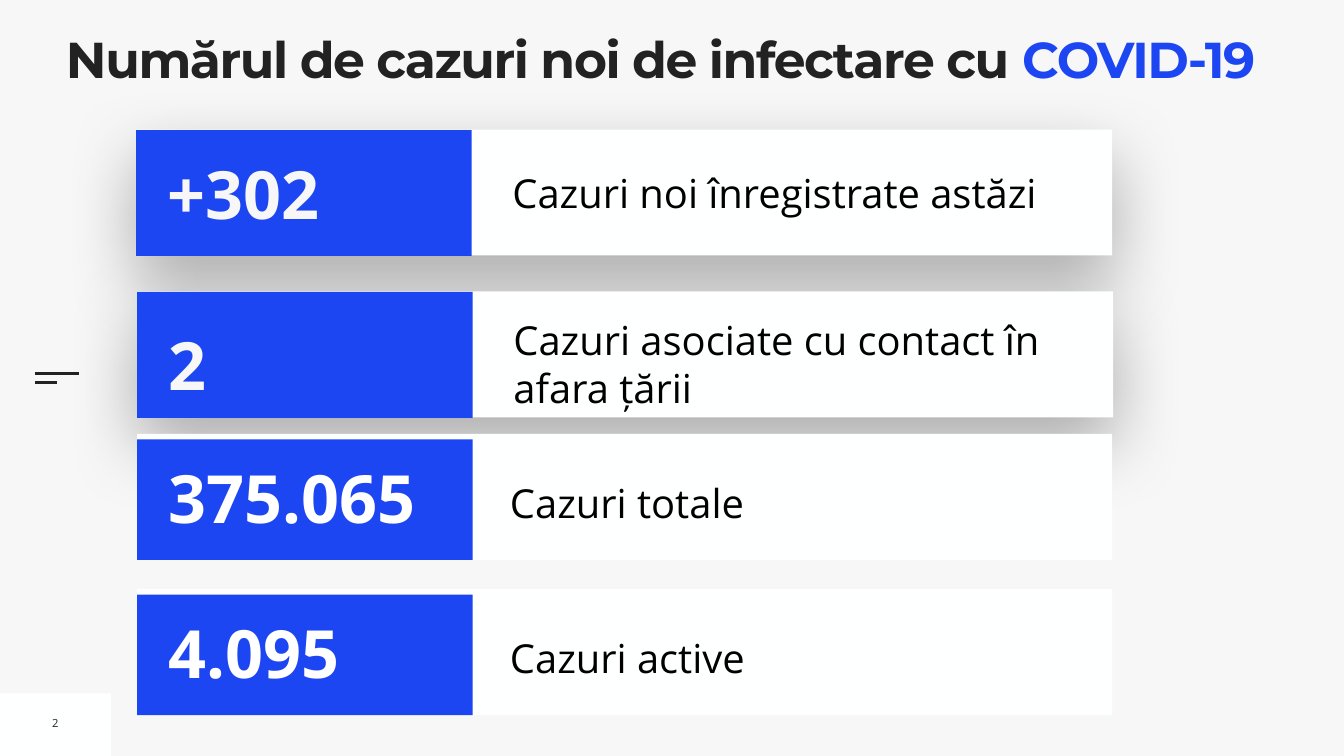
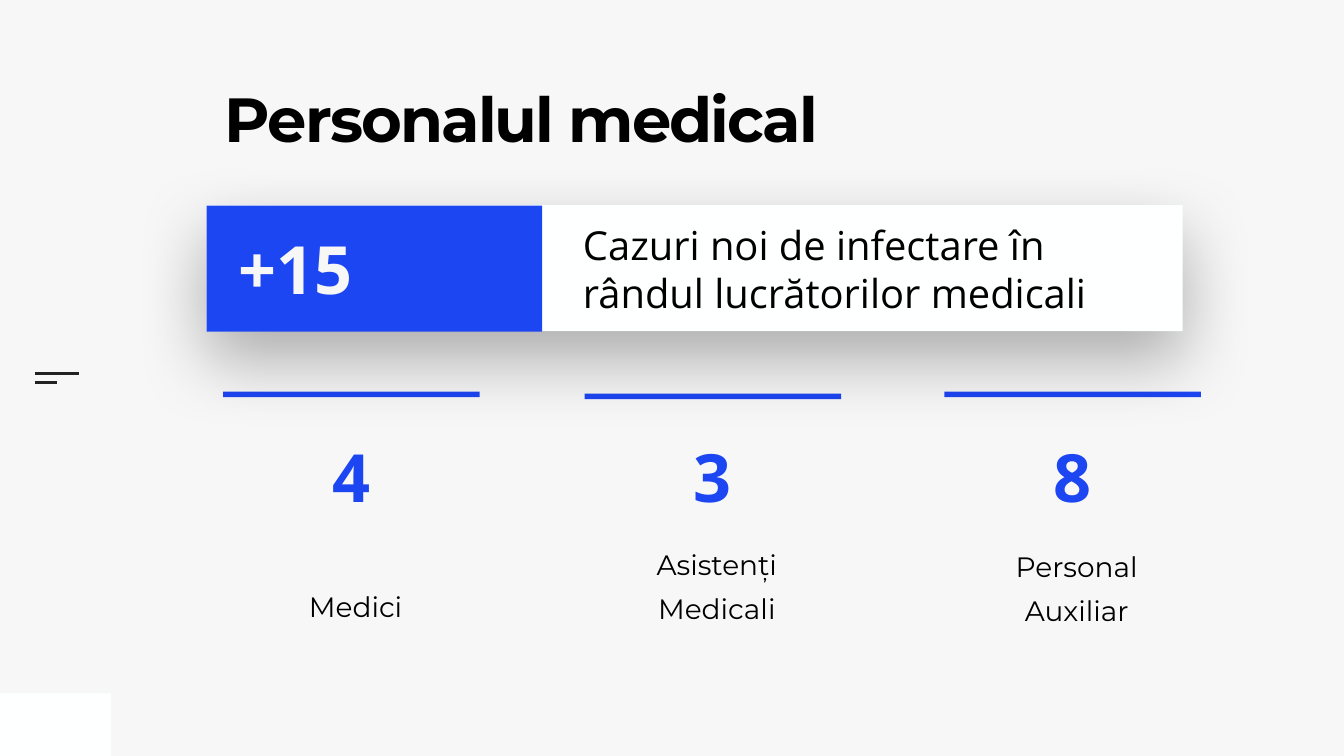
from lxml.etree import SubElement
from pptx import Presentation
from pptx.dml.color import RGBColor
from pptx.enum.shapes import MSO_CONNECTOR, MSO_SHAPE
from pptx.enum.text import MSO_ANCHOR, MSO_AUTO_SIZE, PP_ALIGN
from pptx.oxml.ns import qn
from pptx.util import Inches, Pt

COLORS = {
    "background": "F7F7F7",
    "panel": "FEFFFF",
    "accent": "1D46F3",
    "dark": "222222",
    "black": "000000",
    "white": "FFFFFF",
}
HEADING_FONT, BODY_FONT = "Montserrat", "Open Sans"

CASES_TITLE = [("Numărul de cazuri noi de infectare cu ", "dark"), ("COVID-19", "accent")]
# value, label, left, top, how far the text sits below the middle
NEW_CASES = [
    ("+302", "Cazuri noi înregistrate astăzi", 2.7, 2.57, 0),
    ("2", "Cazuri asociate cu contact în afara țării", 2.72, 5.78, 0.19),
]
# value, label, left, top
TOTAL_CASES = [
    ("375.065", "Cazuri totale", 2.72, 8.61),
    ("4.095", "Cazuri active", 2.72, 11.69),
]

STAFF_TITLE = [("Personalul medical", "black")]
STAFF_CASES = ("+15", "Cazuri noi de infectare în rândul lucrătorilor medicali", 4.1, 4.07, 0)
# value, label, left, top of panel, top of bar
STAFF_GROUPS = [
    ("4", "Medici", 4.43, 7.77, 7.77),
    ("3", "Asistenți Medicali", 11.6, 7.81, 7.81),
    ("8", "Personal Auxiliar", 18.74, 7.85, 7.77),
]
STAFF_WIDTH = 5.09

CARD_HEIGHT, VALUE_WIDTH = 2.5, 6.66
VALUE_INDENT = 0.53


def rgb(name):
    return RGBColor.from_string(COLORS[name])


def add_rectangle(shapes, left, top, width, height, color):
    box = shapes.add_shape(MSO_SHAPE.RECTANGLE, Inches(left), Inches(top),
                           Inches(width), Inches(height))
    box.shadow.inherit = False
    box.fill.solid()
    box.fill.fore_color.rgb = rgb(color)
    box.line.fill.background()
    return box


def add_soft_shadow(box):
    effects = box._element.spPr.find(qn("a:effectLst"))
    shadow = SubElement(effects, qn("a:outerShdw"), blurRad=str(Pt(100)), dist=str(Pt(40)),
                        dir="5400000", rotWithShape="0")
    color = SubElement(shadow, qn("a:srgbClr"), val=COLORS["black"])
    SubElement(color, qn("a:alpha"), val="30000")


def write(box, parts, size, font=BODY_FONT, bold=False, align=PP_ALIGN.LEFT,
          anchor=MSO_ANCHOR.MIDDLE, insets=(0.1, 0.1, 0.1, 0.1), line_spacing=None,
          space_before=0, tracking=None):
    """Fill a box with one paragraph made of (text, colour) parts."""
    frame = box.text_frame
    frame.word_wrap = True
    frame.vertical_anchor = anchor
    frame.margin_left, frame.margin_top, frame.margin_right, frame.margin_bottom = map(
        Inches, insets)
    para = frame.paragraphs[0]
    para.alignment = align
    para.space_before = Pt(space_before)
    if line_spacing:
        para.line_spacing = line_spacing
    for text, color in parts:
        span = para.add_run()
        span.text = text
        span.font.size = Pt(size)
        span.font.name = font
        span.font.bold = bold
        span.font.color.rgb = rgb(color)
        if tracking:
            span.font._element.set("spc", str(round(tracking * 100)))


def add_text(shapes, left, top, width, height, parts, size, grow=True, **style):
    box = shapes.add_textbox(Inches(left), Inches(top), Inches(width), Inches(height))
    write(box, parts, size, **style)
    if grow:
        box.text_frame.auto_size = MSO_AUTO_SIZE.SHAPE_TO_FIT_TEXT
    return box


def add_title(page, left, top, width, height, parts, size, tracking):
    add_text(page.shapes, left, top, width, height, parts, size, grow=False,
             font=HEADING_FONT, bold=True, anchor=MSO_ANCHOR.TOP, insets=(0, 0, 0, 0),
             line_spacing=0.8, tracking=tracking)


def add_value(shapes, left, middle, width, value, color, align=PP_ALIGN.LEFT):
    add_text(shapes, left, middle - 0.9, width, 1.8, [(value, color)], 95,
             bold=True, align=align)


def add_raised_card(page, value, label, left, top, text_drop):
    shapes = page.shapes.add_group_shape().shapes
    middle = top + CARD_HEIGHT / 2 + text_drop
    add_soft_shadow(add_rectangle(shapes, left, top, 19.37, CARD_HEIGHT, "panel"))
    add_text(shapes, left + 7.37, middle - 1.06, 11.76, 2.12, [(label, "black")], 57)
    add_rectangle(shapes, left, top + 0.01, VALUE_WIDTH, CARD_HEIGHT, "accent")
    add_value(shapes, left + VALUE_INDENT, middle, 6.03, value, "background")


def add_flat_card(page, value, label, left, top):
    shapes = page.shapes.add_group_shape().shapes
    middle = top + CARD_HEIGHT / 2
    add_rectangle(shapes, left, top, 19.35, CARD_HEIGHT, "panel")
    add_text(shapes, left + 7.4, middle - 0.64, 11.58, 1.2, [(label, "black")], 57,
             insets=(0, 0, 0, 0), line_spacing=1.3, space_before=20)
    add_rectangle(shapes, left, top + 0.11, VALUE_WIDTH, CARD_HEIGHT - 0.11, "accent")
    add_value(shapes, left + VALUE_INDENT, middle, 6.03, value, "white")


def add_staff_panel(page, label, left, top, bar_top):
    shapes = page.shapes.add_group_shape().shapes
    panel = add_rectangle(shapes, left, top, STAFF_WIDTH, 5.46, "background")
    write(panel, [(label, "black")], 40, font=HEADING_FONT, align=PP_ALIGN.CENTER,
          anchor=MSO_ANCHOR.BOTTOM, insets=(0.55, 0.71, 0.39, 0.87),
          line_spacing=1.3, space_before=20)
    add_rectangle(shapes, left, bar_top, STAFF_WIDTH, 0.11, "accent")


def add_page(deck):
    """Add a slide with the shared background, corner block and side mark."""
    page = deck.slides.add_slide(deck.slide_layouts[6])
    page.background.fill.solid()
    page.background.fill.fore_color.rgb = rgb("background")
    add_rectangle(page.shapes, 0, 13.76, 2.2, 1.24, "panel")
    for right, height in ((1.57, 7.41), (1.13, 7.59)):
        dash = page.shapes.add_connector(MSO_CONNECTOR.STRAIGHT, Inches(0.69), Inches(height),
                                         Inches(right), Inches(height))
        dash.line.color.rgb = rgb("dark")
        dash.line.width = Pt(3)
        SubElement(dash._element.spPr, qn("a:effectLst"))
    return page


def add_cases_page(deck):
    page = add_page(deck)
    number = add_text(page.shapes, 0.93, 14.09, 0.34, 0.51, [("2", "dark")], 16,
                      align=PP_ALIGN.CENTER)
    number.text_frame.word_wrap = False
    add_title(page, 1.31, 0.78, 23.94, 1.58, CASES_TITLE, 72, -2)
    for card in NEW_CASES:
        add_raised_card(page, *card)
    for card in TOTAL_CASES:
        add_flat_card(page, *card)


def add_staff_page(deck):
    page = add_page(deck)
    for _, *panel in STAFF_GROUPS:
        add_staff_panel(page, *panel)
    add_title(page, 4.46, 1.87, 13.01, 2.73, STAFF_TITLE, 89, -2.7)
    add_raised_card(page, *STAFF_CASES)
    for value, _, left, *_ in STAFF_GROUPS:
        add_value(page.shapes, left, 9.44, STAFF_WIDTH, value, "accent", PP_ALIGN.CENTER)


def main():
    deck = Presentation()
    deck.slide_width, deck.slide_height = Inches(26.67), Inches(15)
    add_cases_page(deck)
    add_staff_page(deck)
    deck.save("out.pptx")


if __name__ == "__main__":
    main()
